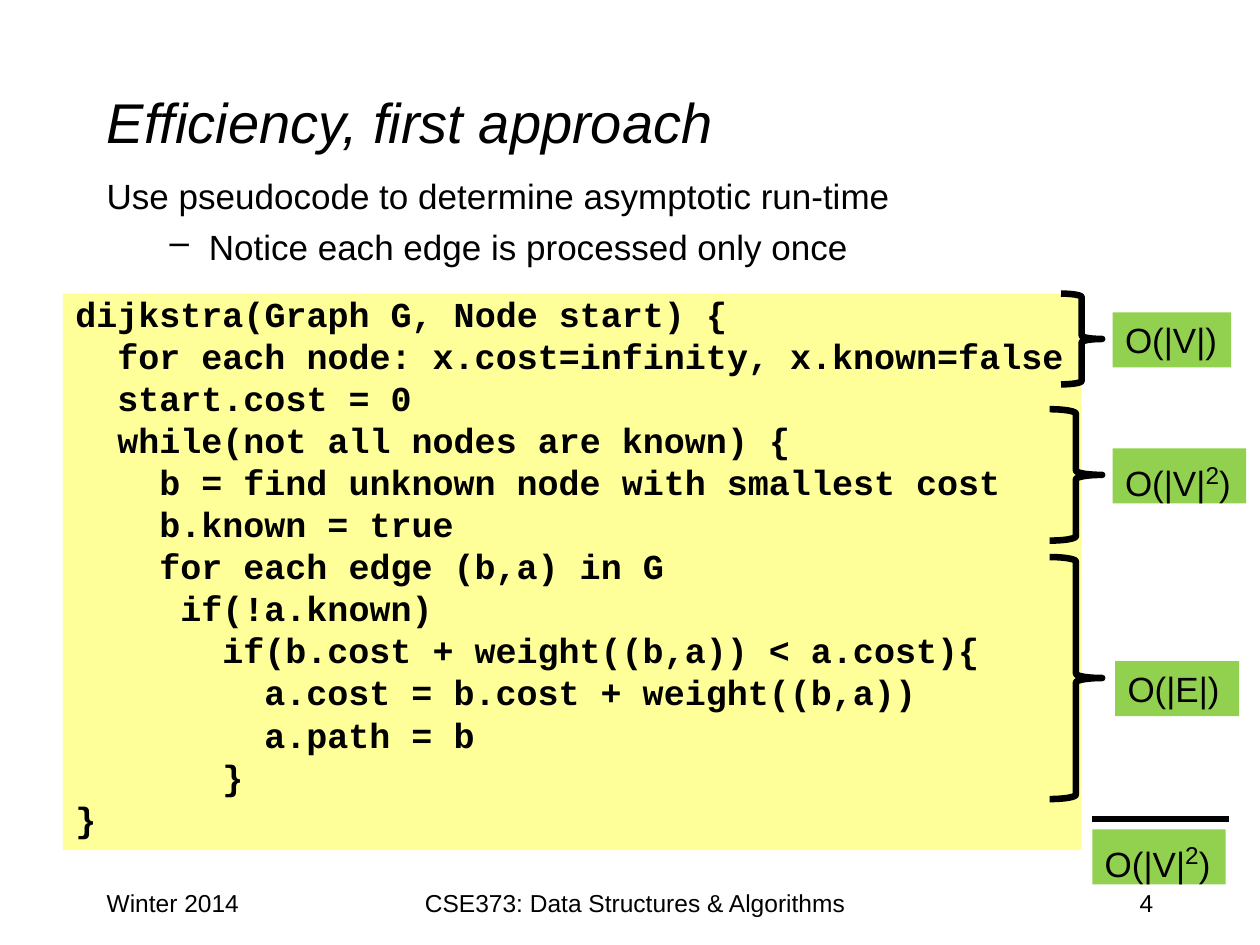
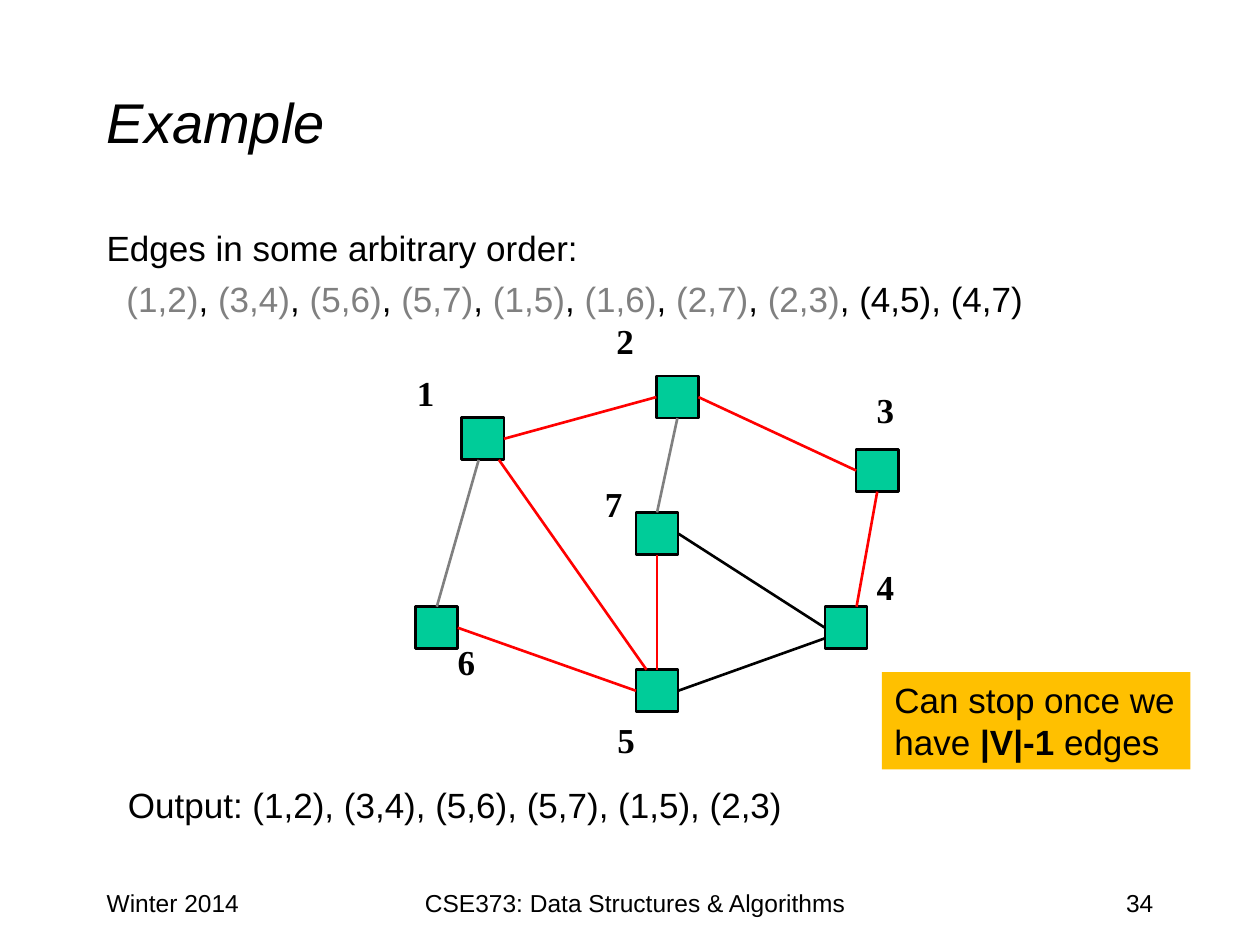
from lxml.etree import SubElement
from pptx import Presentation
from pptx.dml.color import RGBColor
from pptx.enum.shapes import MSO_CONNECTOR, MSO_SHAPE
from pptx.enum.text import MSO_ANCHOR, PP_ALIGN
from pptx.oxml.ns import qn
from pptx.util import Cm, Pt

BLACK = RGBColor(0x00, 0x00, 0x00)
WHITE = RGBColor(0xFF, 0xFF, 0xFF)
GRAY = RGBColor(0x80, 0x80, 0x80)
RED = RGBColor(0xFF, 0x00, 0x00)
YELLOW = RGBColor(0xFF, 0xFF, 0x99)
GREEN = RGBColor(0x92, 0xD0, 0x50)
TEAL = RGBColor(0x00, 0xCC, 0x99)
ORANGE = RGBColor(0xFF, 0xC0, 0x00)
SANS, MONO, SERIF = "Arial", "Courier New", "Times New Roman"

LEFT, WIDTH = 1.9, 21.6
FOOT_TOP = 17.78
CHAR = Pt(12)  # width of one 20 pt Courier New letter
NODE = 0.85
SITES = {(0.5, 0): 0, (0, 0.5): 1, (0.5, 1): 2, (1, 0.5): 3}

CODE = """dijkstra(Graph G, Node start) {
  for each node: x.cost=infinity, x.known=false
  start.cost = 0
  while(not all nodes are known) {
    b = find unknown node with smallest cost
    b.known = true
    for each edge (b,a) in G
     if(!a.known)
       if(b.cost + weight((b,a)) < a.cost){
         a.cost = b.cost + weight((b,a))
         a.path = b
       }
}"""

# Left, top, width and height in the cost column
BRACES = [(0.39, 0.02, 0.83, 1.83), (0.16, 2.35, 1.06, 2.65),
          (0.16, 5.33, 1.06, 4.88)]
# Left, top, width, symbol and power
COSTS = [(1.43, 0.4, 2.39, "V", ""), (1.43, 3.14, 2.69, "V", "2"),
         (1.48, 7.43, 2.5, "E", ""), (1.02, 10.82, 2.69, "V", "2")]

# Node and label corners in the graph box
NODES = {"1": (1.31, 2.42, 0.15, 1.37), "2": (5.23, 1.58, 4.17, 0.32),
         "3": (9.26, 3.06, 9.42, 1.7), "4": (8.63, 6.23, 9.42, 5.28),
         "5": (4.82, 7.5, 4.19, 8.35), "6": (0.38, 6.23, 0.97, 6.78),
         "7": (4.82, 4.33, 3.94, 3.6)}
# Each end is a node and a point as fractions of its square
EDGES = [("1", (1, 0.5), "2", (0, 0.5), RED),
         ("2", (0.5, 1), "7", (0.5, 0), GRAY),
         ("2", (1, 0.5), "3", (0, 0.5), RED),
         ("7", (1, 0.5), "4", (0, 0.5), BLACK),
         ("3", (0.5, 1), "4", (0.75, 0), RED),
         ("7", (0.5, 1), "5", (0.5, 0), RED),
         ("5", (1, 0.5), "4", (0, 0.75), BLACK),
         ("6", (1, 0.5), "5", (0, 0.5), RED),
         ("1", (0.4, 1), "6", (0.5, 0), GRAY),
         ("1", (0.88, 1), "5", (0.25, 0), RED)]
DONE = ["(1,2)", "(3,4)", "(5,6)", "(5,7)", "(1,5)", "(1,6)", "(2,7)", "(2,3)"]


def style(run, size=20, color=BLACK, bold=False, face=SANS):
    run.font.name, run.font.size = face, Pt(size)
    run.font.bold, run.font.color.rgb = bold, color


def add_run(para, text, **look):
    run = para.add_run()
    run.text = text
    style(run, **look)
    return run


def indent(para, margin, first=0):
    props = para._p.get_or_add_pPr()
    props.set("marL", str(int(margin)))
    props.set("indent", str(int(first)))


def write(shape, text, align=PP_ALIGN.LEFT, before=0, **look):
    """Put one paragraph for each line of text and return the paragraphs."""
    frame = shape.text_frame
    frame.text = text
    frame.word_wrap = True
    frame.vertical_anchor = MSO_ANCHOR.TOP
    for para in frame.paragraphs:
        para.alignment = align
        para.space_before = Pt(before)
        for run in para.runs:
            style(run, **look)
    return frame.paragraphs


def add_text(slide, box, text, **look):
    shape = slide.shapes.add_textbox(*map(Cm, box))
    return write(shape, text, **look)


def add_form(slide, box, kind=MSO_SHAPE.RECTANGLE, fill=None, line=None):
    """Add a preset shape; line is its width in points, or None."""
    shape = slide.shapes.add_shape(kind, *map(Cm, box))
    shape.shadow.inherit = False
    if fill is None:
        shape.fill.background()
    else:
        shape.fill.solid()
        shape.fill.fore_color.rgb = fill
    if line is None:
        shape.line.fill.background()
    else:
        shape.line.color.rgb, shape.line.width = BLACK, Pt(line)
    return shape


def add_line(slide, start, end, color, width):
    line = slide.shapes.add_connector(
        MSO_CONNECTOR.STRAIGHT, *map(Cm, (*start, *end)))
    line.line.color.rgb, line.line.width = color, Pt(width)
    SubElement(line._element.spPr, qn("a:effectLst"))
    return line


def add_slide(deck, title, number):
    """Start a slide with the shared title and footers."""
    slide = deck.slides.add_slide(deck.slide_layouts[5])
    slide.background.fill.solid()
    slide.background.fill.fore_color.rgb = WHITE
    head = slide.shapes.title
    head.left, head.top, head.width, head.height = map(
        Cm, (LEFT, 0.85, WIDTH, 3.17))
    para = write(head, title, size=32)[0]
    para.runs[0].font.italic = True
    head.text_frame.vertical_anchor = MSO_ANCHOR.MIDDLE
    for left, width, text, align in (
            (LEFT, 5.3, "Winter 2014", PP_ALIGN.LEFT),
            (8.04, 9.53, "CSE373: Data Structures & Algorithms",
             PP_ALIGN.CENTER),
            (18.2, 5.3, number, PP_ALIGN.RIGHT)):
        add_text(slide, (left, FOOT_TOP, width, 1.27), text,
                 align=align, size=14)
    return slide


def add_code(slide, box):
    panel = add_form(slide, box, fill=YELLOW)
    lines = CODE.split("\n")
    text = "\n".join(line.strip() for line in lines)
    paras = write(panel, text, before=4, bold=True, face=MONO)
    for para, line in zip(paras, lines):
        para.line_spacing = Pt(20)
        indent(para, (len(line) - len(line.lstrip())) * CHAR)


def add_costs(slide, left, top):
    """Brace the parts of the code, name their costs and sum them up."""
    for x, y, width, height in BRACES:
        add_form(slide, (left + x, top + y, width, height),
                 MSO_SHAPE.RIGHT_BRACE, line=3.75)
    for x, y, width, name, power in COSTS:
        tag = add_form(slide, (left + x, top + y, width, 1.11), fill=GREEN)
        para = write(tag, f"O(|{name}|" if power else f"O(|{name}|)")[0]
        if power:
            run = add_run(para, power, size=24)
            run.font._element.set("baseline", "30000")
            add_run(para, ")")
    add_line(slide, (left + 1.02, top + 10.61), (left + 3.77, top + 10.61),
             BLACK, 3.75)


def add_graph(slide, left, top):
    squares = {}
    for name, (x, y, tag_x, tag_y) in NODES.items():
        squares[name] = add_form(
            slide, (left + x, top + y, NODE, NODE), fill=TEAL, line=1.5)
        para = add_text(slide, (left + tag_x, top + tag_y, 0.86, 1.11), name,
                        align=PP_ALIGN.CENTER, bold=True, face=SERIF)
        frame = para[0]._parent
        frame.margin_left = frame.margin_right = 0

    def spot(name, part):
        x, y = NODES[name][:2]
        return left + x + part[0] * NODE, top + y + part[1] * NODE

    for start, out, end, into, color in EDGES:
        line = add_line(slide, spot(start, out), spot(end, into), color, 1.5)
        if out in SITES:
            line.begin_connect(squares[start], SITES[out])
        if into in SITES:
            line.end_connect(squares[end], SITES[into])


def add_order(slide, box):
    """List the edges, with those already handled in gray."""
    paras = add_text(slide, box, "Edges in some arbitrary order:\n", before=5)
    row = paras[1]
    indent(row, Cm(0.4))
    for edge in DONE:
        add_run(row, edge, color=GRAY)
        add_run(row, ", ")
    add_run(row, "(4,5), (4,7)")


def add_note(slide, box):
    note = add_form(slide, box, fill=ORANGE)
    last = write(note, "Can stop once we\nhave ")[1]
    add_run(last, "|V|-1 ", bold=True)
    add_run(last, "edges")


def make_code(deck):
    slide = add_slide(deck, "Efficiency, first approach", "4")
    paras = add_text(slide, (LEFT, 3.39, WIDTH, 1.9),
                     "Use pseudocode to determine asymptotic run-time\n"
                     "Notice each edge is processed only once", before=5)
    indent(paras[1], Cm(2.06), -Cm(0.79))
    SubElement(paras[1]._p.get_or_add_pPr(), qn("a:buChar"), char="–")
    add_code(slide, (1.27, 5.92, 20.53, 11.22))
    add_costs(slide, 21, 5.9)


def make_graph(deck):
    slide = add_slide(deck, "Example", "34")
    add_order(slide, (LEFT, 4.45, WIDTH, 2.2))
    add_graph(slide, 8, 6)
    add_text(slide, (2.33, 15.66, 19.7, 1.48),
             "Output: (1,2), (3,4), (5,6), (5,7), (1,5), (2,3)", before=5)
    add_note(slide, (17.78, 13.55, 6.22, 1.96))


def main():
    deck = Presentation()
    deck.slide_width, deck.slide_height = Cm(25.4), Cm(19.05)
    make_code(deck)
    make_graph(deck)
    deck.save("out.pptx")


if __name__ == "__main__":
    main()
